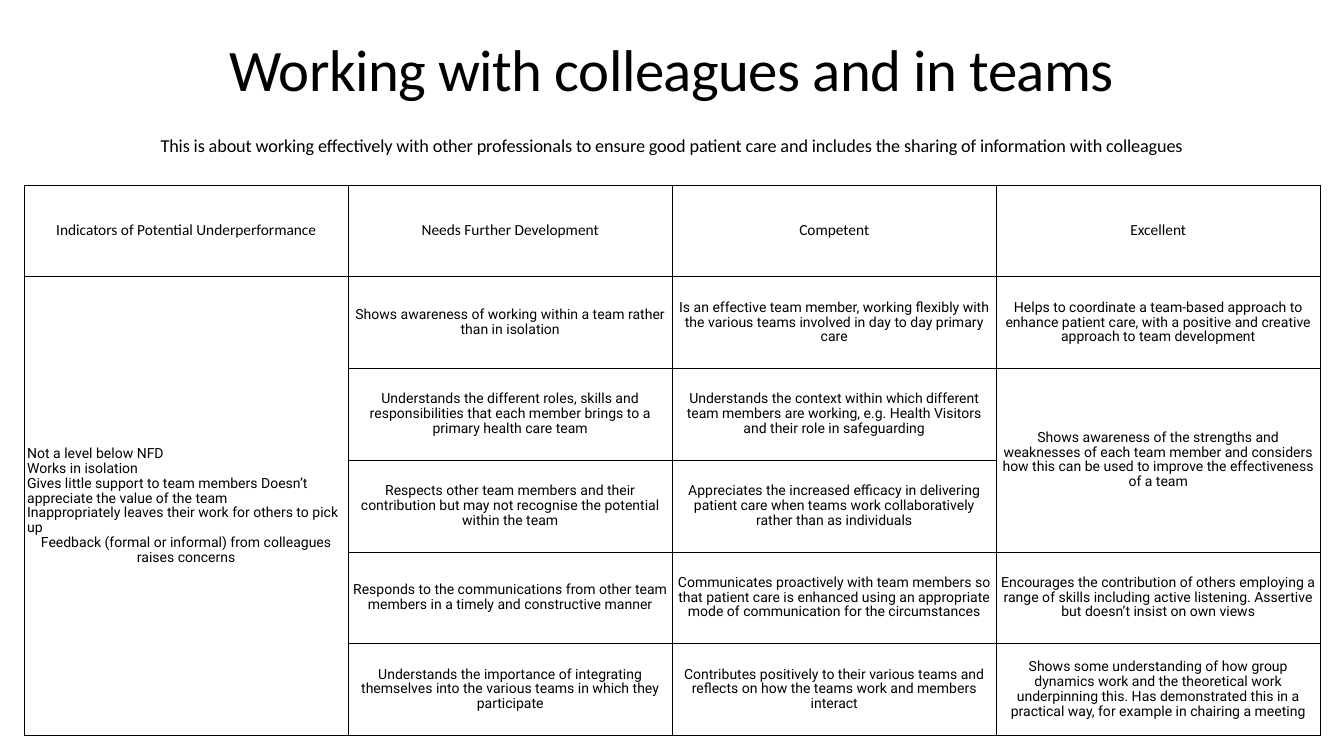
"""Build a slide with a competence grid for working with colleagues and in teams."""
from dataclasses import dataclass

from lxml.etree import SubElement
from pptx import Presentation
from pptx.dml.color import RGBColor
from pptx.enum.text import MSO_ANCHOR, PP_ALIGN
from pptx.oxml.ns import qn
from pptx.util import Inches, Pt


@dataclass(frozen=True)
class Theme:
    ink: str = "000000"
    paper: str = "FFFFFF"
    heading_font: str = "Calibri"
    body_font: str = "Roboto"
    title_size: int = 84
    subtitle_size: int = 26
    header_size: int = 22
    body_size: int = 20
    border_width: int = 1
    inset: float = 0.06


theme = Theme()


def add_text(paragraph, text, size, font, line_spacing, alignment=PP_ALIGN.CENTER):
    paragraph.alignment = alignment
    paragraph.line_spacing = line_spacing
    run = paragraph.add_run()
    run.text = text
    run.font.size = Pt(size)
    run.font.name = font
    run.font.color.rgb = RGBColor.from_string(theme.ink)
    return run


def add_borders(cell):
    properties = cell._tc.get_or_add_tcPr()
    for side in ("a:lnL", "a:lnR", "a:lnT", "a:lnB"):
        line = SubElement(properties, qn(side), w=str(Pt(theme.border_width)))
        fill = SubElement(line, qn("a:solidFill"))
        SubElement(fill, qn("a:srgbClr"), val=theme.ink)


presentation = Presentation()
presentation.slide_width = Inches(26.67)
presentation.slide_height = Inches(15)
slide = presentation.slides.add_slide(presentation.slide_layouts[6])
slide.background.fill.solid()
slide.background.fill.fore_color.rgb = RGBColor.from_string(theme.paper)

headings = [
    ("Working with colleagues and in teams", 0.85, 1.89, theme.title_size, 0.8, -80),
    (
        "This is about working effectively with other professionals to ensure good patient care "
        "and includes the sharing of information with colleagues",
        2.61, 0.91, theme.subtitle_size, 1.0, -20,
    ),
]
for text, top, height, size, line_spacing, tracking in headings:
    text_box = slide.shapes.add_textbox(Inches(1.33), Inches(top), Inches(24), Inches(height))
    frame = text_box.text_frame
    frame.word_wrap = True
    frame.vertical_anchor = MSO_ANCHOR.TOP
    frame.margin_left = frame.margin_right = Inches(theme.inset)
    frame.margin_top = frame.margin_bottom = Inches(theme.inset)
    run = add_text(frame.paragraphs[0], text, size, theme.heading_font, line_spacing)
    run._r.get_or_add_rPr().set("spc", str(tracking))

underperformance = [
    "Not a level below NFD",
    "Works in isolation",
    "Gives little support to team members Doesn’t appreciate the value of the team",
    "Inappropriately leaves their work for others to pick up",
    "Feedback (formal or informal) from colleagues raises concerns",
]
grid = [
    [
        ["Indicators of Potential Underperformance"],
        ["Needs Further Development"],
        ["Competent"],
        ["Excellent"],
    ],
    [
        underperformance,
        ["Shows awareness of working within a team rather than in isolation"],
        ["Is an effective team member, working flexibly with the various teams involved in day to day primary care"],
        ["Helps to coordinate a team-based approach to enhance patient care, with a positive and creative approach to team development"],
    ],
    [
        [],
        ["Understands the different roles, skills and responsibilities that each member brings to a primary health care team"],
        ["Understands the context within which different team members are working, e.g. Health Visitors and their role in safeguarding"],
        ["Shows awareness of the strengths and weaknesses of each team member and considers how this can be used to improve the effectiveness of a team"],
    ],
    [
        [],
        ["Respects other team members and their contribution but may not recognise the potential within the team"],
        ["Appreciates the increased efficacy in delivering patient care when teams work collaboratively rather than as individuals"],
        [],
    ],
    [
        [],
        ["Responds to the communications from other team members in a timely and constructive manner"],
        ["Communicates proactively with team members so that patient care is enhanced using an appropriate mode of communication for the circumstances"],
        ["Encourages the contribution of others employing a range of skills including active listening. Assertive but doesn’t insist on own views"],
    ],
    [
        [],
        ["Understands the importance of integrating themselves into the various teams in which they participate"],
        ["Contributes positively to their various teams and reflects on how the teams work and members interact"],
        ["Shows some understanding of how group dynamics work and the theoretical work underpinning this. Has demonstrated this in a practical way, for example in chairing a meeting"],
    ],
]

table = slide.shapes.add_table(
    len(grid), len(grid[0]), Inches(0.48), Inches(3.67), Inches(25.72), Inches(10.92)
).table
table.first_row = False
table.horz_banding = False
table.cell(1, 0).merge(table.cell(5, 0))
table.cell(2, 3).merge(table.cell(3, 3))

for row_index, row in enumerate(grid):
    is_header = row_index == 0
    size = theme.header_size if is_header else theme.body_size
    font = theme.heading_font if is_header else theme.body_font
    for column_index, lines in enumerate(row):
        cell = table.cell(row_index, column_index)
        add_borders(cell)
        cell.fill.background()
        cell.vertical_anchor = MSO_ANCHOR.MIDDLE
        cell.margin_left = cell.margin_right = Inches(theme.inset)
        cell.margin_top = cell.margin_bottom = Inches(theme.inset)
        frame = cell.text_frame
        for line_index, text in enumerate(lines):
            paragraph = frame.add_paragraph() if line_index else frame.paragraphs[0]
            is_last = line_index == len(lines) - 1
            alignment = PP_ALIGN.CENTER if is_last else PP_ALIGN.LEFT
            add_text(paragraph, text, size, font, 0.9, alignment)

presentation.save("out.pptx")
